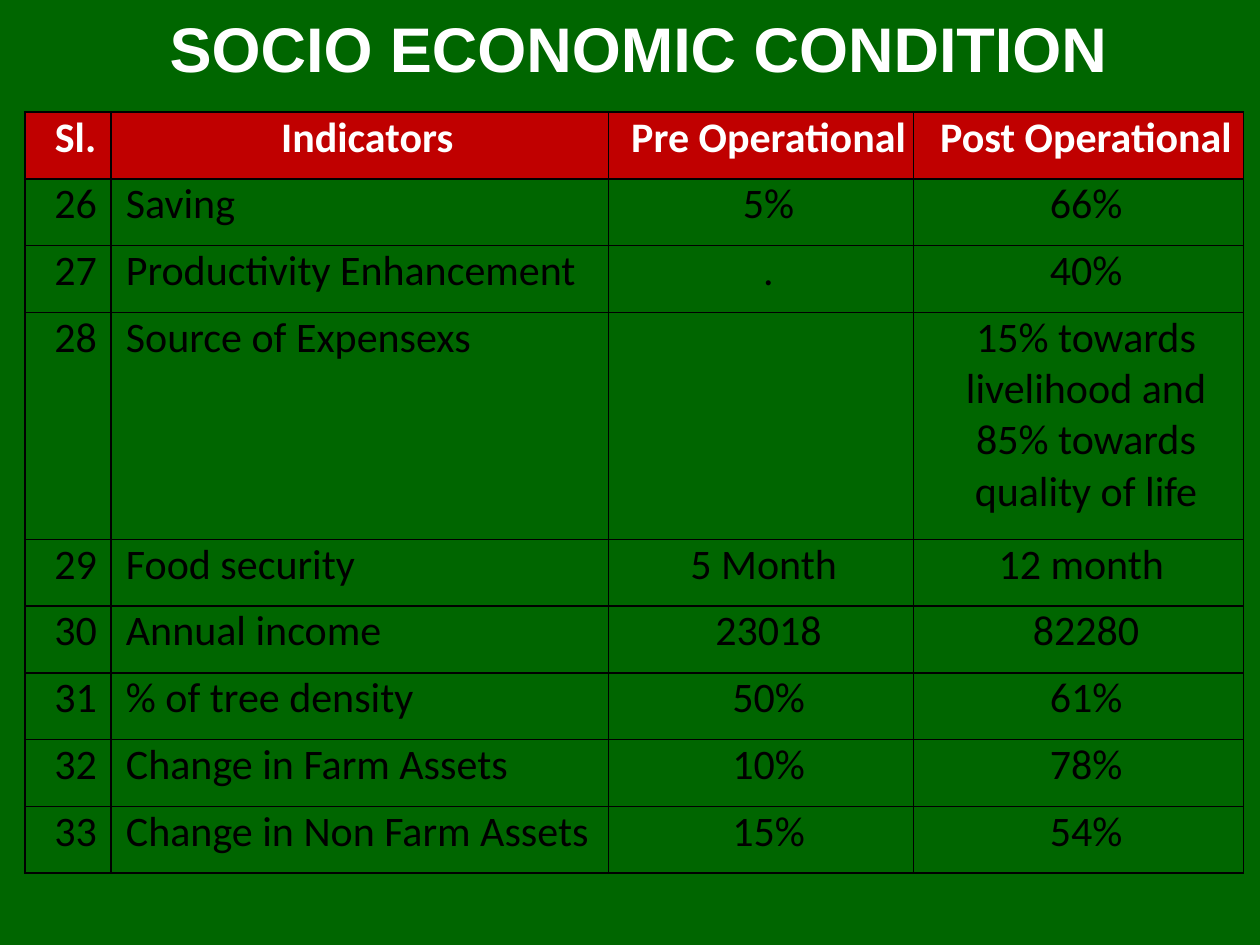
from typing import NamedTuple

from lxml import etree
from pptx import Presentation
from pptx.dml.color import RGBColor
from pptx.enum.text import MSO_ANCHOR, PP_ALIGN
from pptx.oxml.ns import qn
from pptx.util import Inches, Pt

CENTER, LEFT = PP_ALIGN.CENTER, PP_ALIGN.LEFT
MIDDLE = MSO_ANCHOR.MIDDLE
COLORS = {"green": "006600", "red": "C00000", "white": "FFFFFF", "black": "000000"}
HEADINGS = ("Sl.", "Indicators", "Pre Operational", "Post Operational")
COLUMN_WIDTHS = (0.68, 3.95, 2.42, 2.62)
ROW_HEIGHT, TALL_ROW_HEIGHT = 0.53, 1.8
FIRST_NUMBER = 26


class Indicator(NamedTuple):
    name: str
    before: str
    after: str
    height: float = ROW_HEIGHT


INDICATORS = (
    Indicator("Saving", "5%", "66%"),
    Indicator("Productivity Enhancement", ".", "40%"),
    Indicator("Source of Expensexs", "",
              "15% towards livelihood and 85% towards quality of life", TALL_ROW_HEIGHT),
    Indicator("Food security", "5 Month ", "12 month "),
    Indicator("Annual income", "23018", "82280"),
    Indicator("% of tree density", "50%", "61%"),
    Indicator("Change in Farm Assets", "10%", "78%"),
    Indicator("Change in Non Farm Assets", "15%", "54%"),
)


def rgb(name: str) -> RGBColor:
    return RGBColor.from_string(COLORS[name])


def paint(fill, color: str) -> None:
    fill.solid()
    fill.fore_color.rgb = rgb(color)


def add_text(frame, text: str, font: str, size: int, color: str, bold: bool, align) -> None:
    para = frame.paragraphs[0]
    para.alignment = align
    span = para.add_run()
    span.text = text
    span.font.name = font
    span.font.size = Pt(size)
    span.font.bold = bold
    span.font.color.rgb = rgb(color)


def add_borders(cell) -> None:
    properties = cell._tc.get_or_add_tcPr()
    for position, side in enumerate(("lnL", "lnR", "lnT", "lnB")):
        line = etree.Element(qn(f"a:{side}"), w=str(Pt(1)))
        fill = etree.SubElement(line, qn("a:solidFill"))
        etree.SubElement(fill, qn("a:srgbClr"), val=COLORS["black"])
        properties.insert(position, line)  # borders precede the cell fill


def fill_cell(cell, text: str, row: int, column: int) -> None:
    heading = row == 0
    if heading:
        paint(cell.fill, "red")
    elif column == 0:
        paint(cell.fill, "green")
    else:
        cell.fill.background()
    add_borders(cell)
    cell.margin_left = Inches(0.12)
    cell.margin_right = cell.margin_top = cell.margin_bottom = 0
    if text:
        align = LEFT if column == 1 and not heading else CENTER
        add_text(cell.text_frame, text, "Calibri", 24,
                 "white" if heading else "black", heading, align)


def add_title(page) -> None:
    title = page.shapes.title
    title.left, title.top = Inches(0), Inches(0)
    title.width, title.height = Inches(10), Inches(0.75)
    paint(title.fill, "green")
    title.text_frame.vertical_anchor = MIDDLE
    add_text(title.text_frame, " SOCIO ECONOMIC CONDITION", "Arial", 36, "white", True, CENTER)


def add_indicator_table(page) -> None:
    rows = [HEADINGS] + [
        (str(number), item.name, item.before, item.after)
        for number, item in enumerate(INDICATORS, FIRST_NUMBER)
    ]
    heights = [ROW_HEIGHT] + [item.height for item in INDICATORS]
    table = page.shapes.add_table(
        len(rows), len(HEADINGS), Inches(0.2), Inches(0.89),
        Inches(sum(COLUMN_WIDTHS)), Inches(sum(heights))).table
    table.first_row = table.horz_banding = False
    for column, width in zip(table.columns, COLUMN_WIDTHS):
        column.width = Inches(width)
    for row, height in zip(table.rows, heights):
        row.height = Inches(height)
    for row, texts in enumerate(rows):
        for column, text in enumerate(texts):
            fill_cell(table.cell(row, column), text, row, column)


def main() -> None:
    deck = Presentation()
    deck.slide_width, deck.slide_height = Inches(10), Inches(7.5)
    page = deck.slides.add_slide(deck.slide_layouts[5])  # title only
    paint(page.background.fill, "green")
    add_title(page)
    add_indicator_table(page)
    deck.save("out.pptx")


if __name__ == "__main__":
    main()
